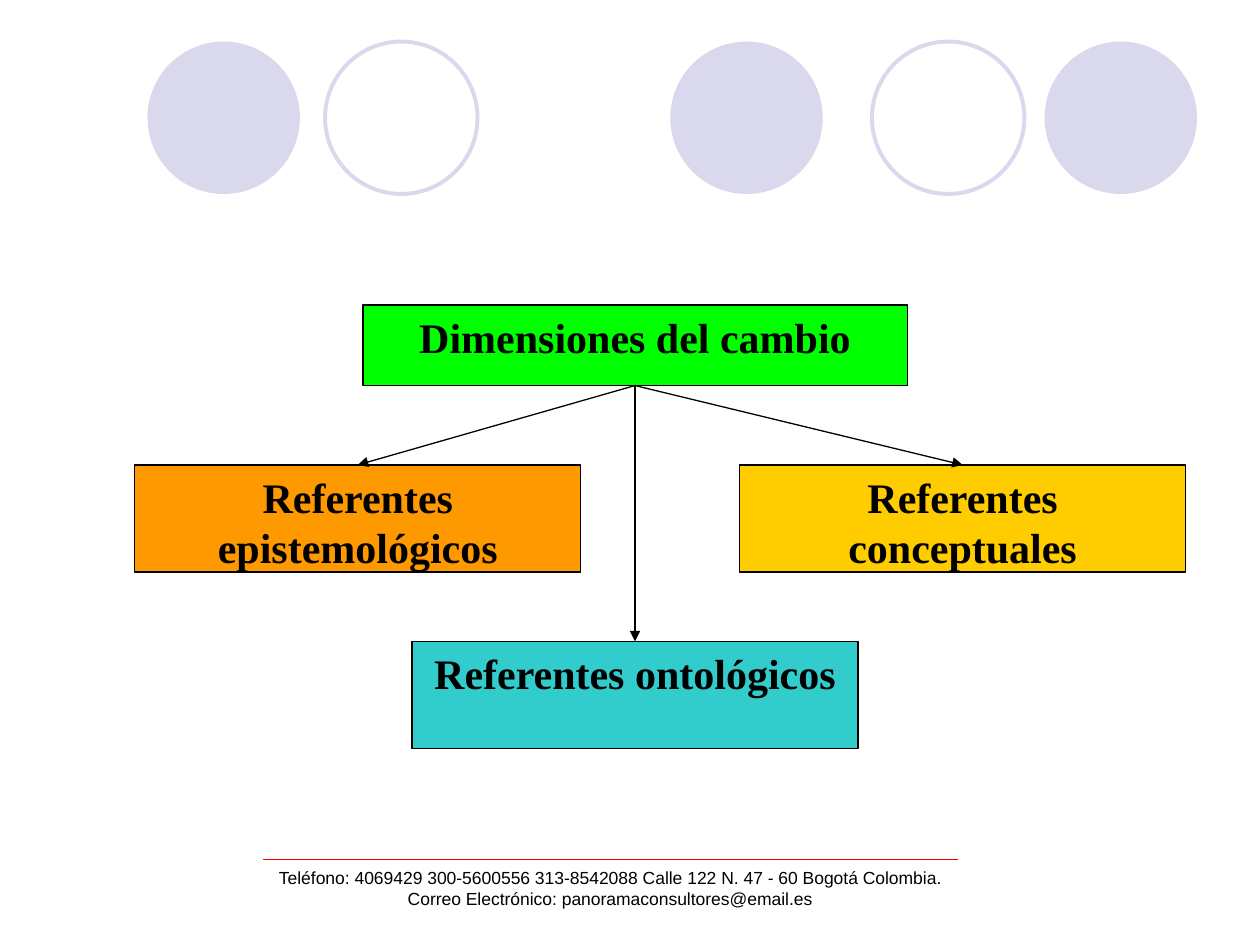
from lxml import etree
from pptx import Presentation
from pptx.dml.color import RGBColor
from pptx.enum import shapes, text
from pptx.oxml.ns import qn
from pptx.util import Inches, Pt

HUES = {
    "lilac": "D9D8EC", "red": "FF0000", "black": "000000", "green": "00FF00",
    "orange": "FF9900", "teal": "33CCCC", "gold": "FFCC00",
}
DISCS = [1.17, 5.32, 8.29]
RINGS = [2.58, 6.92]
SIZE = 1.21
LEAVES = [
    ("Referentes epistemológicos", 1.07, 3.69, "orange"),
    ("Referentes ontológicos", 3.27, 5.09, "teal"),
    ("Referentes conceptuales", 5.87, 3.69, "gold"),
]
FOOTER = [
    "Teléfono: 4069429 300-5600556 313-8542088 Calle 122 N. 47 - 60 Bogotá Colombia.",
    "Correo Electrónico: panoramaconsultores@email.es",
]


def color(name):
    return RGBColor.from_string(HUES[name])


def style(para, font, size, bold=False):
    para.alignment = text.PP_ALIGN.CENTER
    para.font.name = font
    para.font.size = Pt(size)
    para.font.bold = bold
    para.font.color.rgb = color("black")


def add_circle(slide, left, filled):
    ring = slide.shapes.add_shape(
        shapes.MSO_SHAPE.OVAL, Inches(left), Inches(0.33), Inches(SIZE), Inches(SIZE))
    ring.shadow.inherit = False
    if filled:
        ring.fill.solid()
        ring.fill.fore_color.rgb = color("lilac")
        ring.line.fill.background()
    else:
        ring.fill.background()
        ring.line.color.rgb = color("lilac")
        ring.line.width = Pt(2.25)


def add_box(slide, label, left, top, width, height, hue):
    box = slide.shapes.add_shape(
        shapes.MSO_SHAPE.RECTANGLE,
        Inches(left), Inches(top), Inches(width), Inches(height))
    box.shadow.inherit = False
    box.fill.solid()
    box.fill.fore_color.rgb = color(hue)
    box.line.color.rgb = color("black")
    box.line.width = Pt(0.75)
    frame = box.text_frame
    frame.word_wrap = True
    frame.vertical_anchor = text.MSO_ANCHOR.TOP
    frame.text = label
    style(frame.paragraphs[0], "Times New Roman", 24, True)
    return box


def add_line(slide, hue, start=(0, 0), end=(0, 0)):
    line = slide.shapes.add_connector(
        shapes.MSO_CONNECTOR.STRAIGHT, *map(Inches, start + end))
    line.line.color.rgb = color(hue)
    line.line.width = Pt(0.75)
    etree.SubElement(line._element.spPr, qn("a:effectLst"))
    return line


def add_arrow(slide, root, leaf):
    """Join the bottom of root to the top of leaf."""
    line = add_line(slide, "black")
    line.begin_connect(root, 2)
    line.end_connect(leaf, 0)
    etree.SubElement(line.line._get_or_add_ln(), qn("a:tailEnd"), type="triangle")


def add_footer(slide):
    add_line(slide, "red", (2.09, 6.82), (7.6, 6.82))
    box = slide.shapes.add_textbox(Inches(1.53), Inches(6.83), Inches(6.62), Inches(0.5))
    frame = box.text_frame
    frame.word_wrap = True
    frame.text = "\n".join(FOOTER)
    for para in frame.paragraphs:
        style(para, "Arial", 10)


def main():
    deck = Presentation()
    deck.slide_width, deck.slide_height = Inches(10), Inches(7.5)
    slide = deck.slides.add_slide(deck.slide_layouts[6])
    for left in DISCS:
        add_circle(slide, left, True)
    for left in RINGS:
        add_circle(slide, left, False)
    add_footer(slide)
    root = add_box(slide, "Dimensiones del cambio", 2.88, 2.42, 4.32, 0.64, "green")
    leaves = [add_box(slide, label, left, top, 3.54, 0.85, hue)
              for label, left, top, hue in LEAVES]
    for leaf in leaves:
        add_arrow(slide, root, leaf)
    deck.save("out.pptx")


if __name__ == "__main__":
    main()
